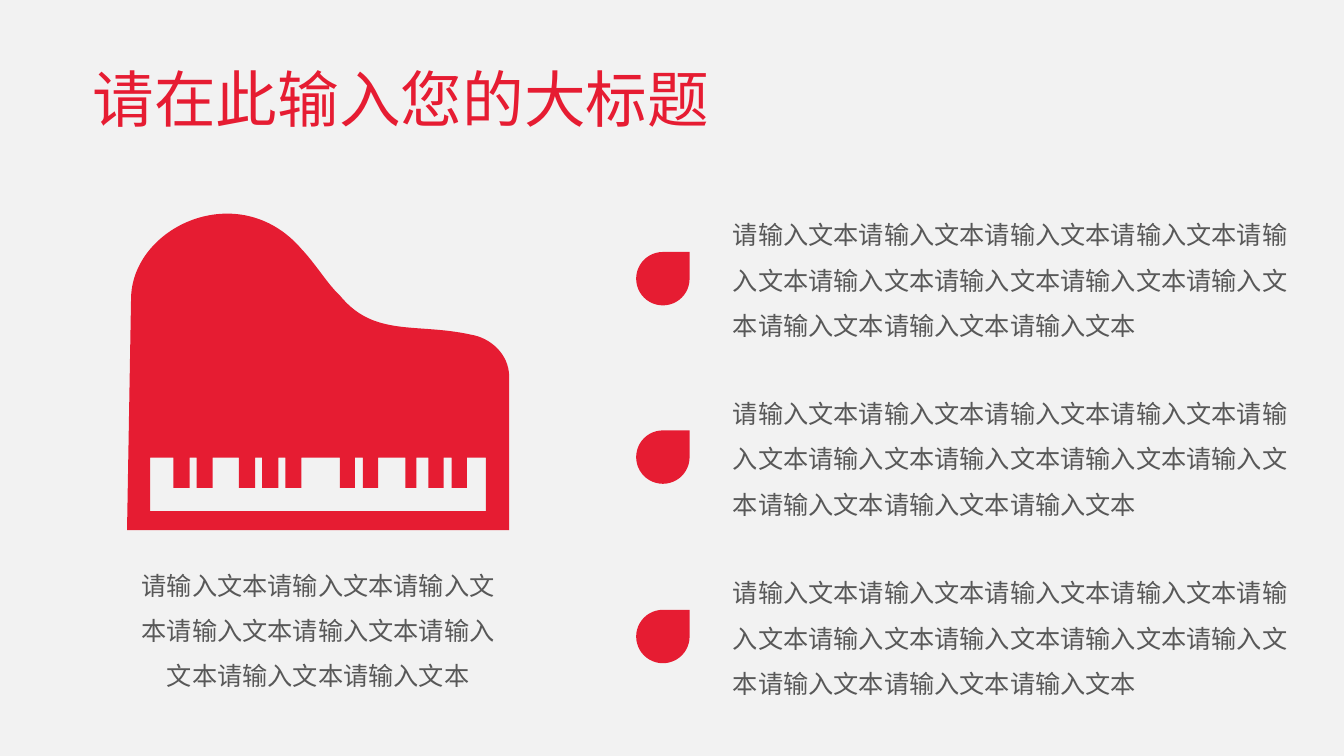
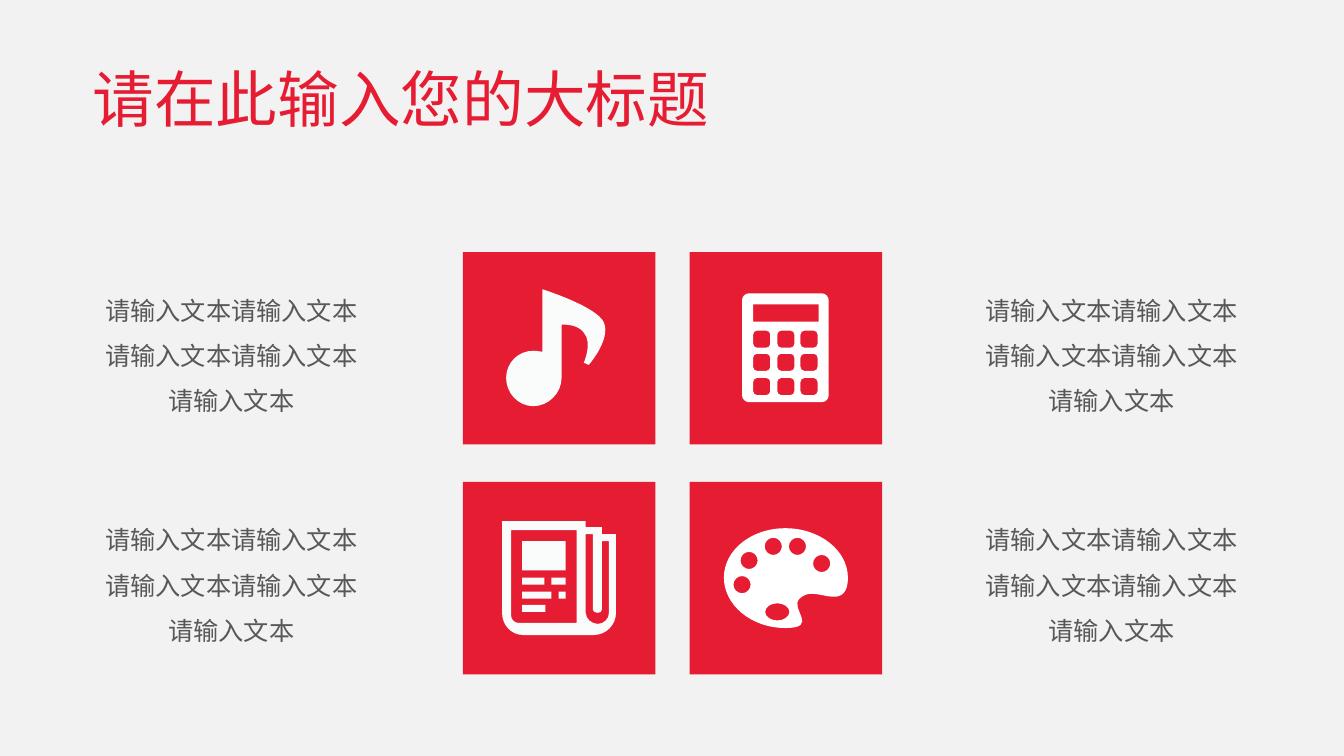
import pptx
import pptx.dml.color
import pptx.enum.shapes
import pptx.enum.text
import pptx.oxml.ns
import pptx.util
from lxml import etree

Inches = pptx.util.Inches
qn = pptx.oxml.ns.qn
SHAPE = pptx.enum.shapes.MSO_SHAPE
ALIGN = pptx.enum.text.PP_ALIGN
ANCHOR = pptx.enum.text.MSO_ANCHOR

# Shared look
COLORS = {"background": "F2F2F2", "red": "E61C32", "text": "585858",
          "white": "FFFFFF", "off_white": "F9FCFB"}
FONT = "Noto Sans CJK SC"
SLIDE_SIZE = (13.33, 7.5)
TITLE_BOX = (0.82, 0.18, 11.81, 1.22)

# Content
TITLE = "请在此输入您的大标题"
PHRASE = "请输入文本"
PIANO_CAPTION = PHRASE * 8
POINT_TEXT = PHRASE * 12
TILE_CAPTION = PHRASE * 5

# Layout: bullet points on slide 1, tiles on slide 2
POINT_TOPS = (2.5, 4.27, 6.05)
TILE_SIDE = 1.91
TILE_COLUMNS = (6.84, 4.59)
TILE_ROWS = (2.5, 4.78)
CAPTION_COLUMNS = (0.93, 9.66)


# Outlines: a contour lists corners (x, y) and cubic curves
# (x1, y1, x2, y2, x, y) in inches; its first step is a corner
def rectangle(left, top, right, bottom):
    return [(left, top), (right, top), (right, bottom), (left, bottom)]


def rounded(left, top, right, bottom, radius_x, radius_y):
    pull_x, pull_y = 0.45 * radius_x, 0.45 * radius_y
    return [
        (left + radius_x, top), (right - radius_x, top),
        (right - pull_x, top, right, top + pull_y, right, top + radius_y),
        (right, bottom - radius_y),
        (right, bottom - pull_y, right - pull_x, bottom,
         right - radius_x, bottom),
        (left + radius_x, bottom),
        (left + pull_x, bottom, left, bottom - pull_y,
         left, bottom - radius_y),
        (left, top + radius_y),
        (left, top + pull_y, left + pull_x, top, left + radius_x, top)]


def ellipse(x, y, width, height):
    half_width, half_height = width / 2, height / 2
    outline = rounded(x - half_width, y - half_height,
                      x + half_width, y + half_height,
                      half_width, half_height)
    return outline[:1] + [step for step in outline if len(step) == 6]


def piano():
    body = [
        (1.26, 5.26), (5.05, 5.26), (5.05, 3.74),
        (5.05, 3.51, 4.86, 3.35, 4.67, 3.32),
        (4.13, 3.2, 3.71, 3.35, 3.37, 2.93),
        (3.25, 2.82, 3.14, 2.63, 2.99, 2.47),
        (2.37, 1.75, 1.3, 2.25, 1.3, 2.97)]
    black_keys = [(1.72, 1.88), (1.95, 2.11), (2.37, 2.53), (2.6, 2.76),
                  (2.83, 2.99), (3.37, 3.52), (3.6, 3.75), (4.02, 4.13),
                  (4.25, 4.4), (4.48, 4.63)]
    top, key_end, bottom = 4.54, 4.84, 5.07
    keyboard = [(1.49, bottom), (1.49, top)]
    for left, right in black_keys:
        keyboard += [(left, top), (left, key_end),
                     (right, key_end), (right, top)]
    keyboard += [(4.82, top), (4.82, bottom)]
    return [body, keyboard]


def note():
    return [[
        (5.29, 3.48), (5.33, 3.48, 5.36, 3.49, 5.38, 3.49), (5.38, 2.87),
        (5.38, 2.87, 5.92, 3.04, 5.99, 3.2),
        (6.06, 3.37, 5.84, 3.62, 5.84, 3.62), (5.79, 3.6),
        (5.79, 3.6, 5.88, 3.4, 5.79, 3.3),
        (5.74, 3.23, 5.64, 3.22, 5.57, 3.22), (5.57, 3.75),
        (5.57, 3.9, 5.44, 4.03, 5.29, 4.03),
        (5.14, 4.03, 5.02, 3.9, 5.02, 3.75),
        (5.02, 3.6, 5.14, 3.48, 5.29, 3.48)]]


def calculator():
    key = 0.17
    keys = [rounded(x, y, x + key, y + key, 0.04, 0.04)
            for x in (7.47, 7.71, 7.94) for y in (3.28, 3.51, 3.75)]
    return [rounded(7.36, 2.91, 8.22, 3.99, 0.07, 0.07),
            rectangle(7.47, 3.02, 8.12, 3.19)] + keys


def newspaper():
    outline = [
        (5.89, 6.3), (5.19, 6.3), (5.07, 6.3, 4.98, 6.2, 4.98, 6.08),
        (4.98, 5.17), (5.81, 5.17), (5.81, 5.23), (5.97, 5.23), (5.97, 5.3),
        (6.11, 5.3), (6.11, 6.08), (6.11, 6.2, 6.01, 6.3, 5.89, 6.3)]
    page = [(5.72, 5.26), (5.07, 5.26), (5.07, 6.11),
            (5.07, 6.14, 5.1, 6.18, 5.14, 6.18), (5.72, 6.18)]
    fold = [
        (6.04, 5.37), (5.97, 5.37), (5.97, 6.05),
        (5.97, 6.07, 5.95, 6.08, 5.93, 6.08),
        (5.91, 6.08, 5.88, 6.07, 5.88, 6.05), (5.88, 5.3), (5.81, 5.3),
        (5.81, 6.08), (5.81, 6.14, 5.87, 6.19, 5.93, 6.19),
        (5.99, 6.19, 6.04, 6.14, 6.04, 6.08)]
    photo = rectangle(5.18, 5.37, 5.61, 5.66)
    text_bars = [(5.18, 5.73, 5.4), (5.47, 5.73, 5.61), (5.18, 5.87, 5.47),
                 (5.54, 5.87, 5.61), (5.18, 6, 5.41)]
    bars = [rectangle(left, top, right, top + 0.07)
            for left, top, right in text_bars]
    return [outline, page, fold, photo] + bars


def palette():
    board = [
        (7.79, 5.24), (8.13, 5.24, 8.41, 5.46, 8.41, 5.73),
        (8.41, 5.88, 8.35, 5.92, 8.27, 5.92),
        (8.2, 5.92, 8.12, 5.89, 8.05, 5.89),
        (8, 5.89, 7.96, 5.91, 7.93, 5.94),
        (7.83, 6.04, 8.13, 6.23, 7.79, 6.23),
        (7.45, 6.23, 7.18, 6, 7.18, 5.73),
        (7.18, 5.46, 7.45, 5.24, 7.79, 5.24)]
    paints = [(8.15, 5.59), (7.91, 5.42), (7.67, 5.42), (7.43, 5.56),
              (7.36, 5.8)]
    thumb_hole = ellipse(7.71, 6.07, 0.24, 0.17)
    return [board, thumb_hole] + [ellipse(x, y, 0.17, 0.17) for x, y in paints]


# Drawing helpers
def rgb(name):
    return pptx.dml.color.RGBColor.from_string(COLORS[name])


def paint(shape, color):
    shape.shadow.inherit = False
    shape.fill.solid()
    shape.fill.fore_color.rgb = rgb(color)
    shape.line.fill.background()


def add_preset(slide, preset, box, color):
    shape = slide.shapes.add_shape(preset, *map(Inches, box))
    paint(shape, color)
    return shape


def add_outline(slide, contours, color):
    builder = None
    for contour in contours:
        points = [(Inches(step[i]), Inches(step[i + 1]))
                  for step in contour for i in range(0, len(step), 2)]
        if builder is None:
            builder = slide.shapes.build_freeform(*points[0])
        else:
            builder.move_to(*points[0])
        builder.add_line_segments(points[1:], close=True)
    shape = builder.convert_to_shape()
    paint(shape, color)

    # Turn each three segments that stand for a curve into one cubic curve
    segments = iter(list(shape._element.iter(qn("a:lnTo"))))
    for contour in contours:
        for step in contour[1:]:
            first = next(segments)
            if len(step) == 2:
                continue
            curve = etree.Element(qn("a:cubicBezTo"))
            first.addprevious(curve)
            for segment in (first, next(segments), next(segments)):
                curve.append(segment[0])
                segment.getparent().remove(segment)


def write(shape, text, size, color, spacing, align, anchor):
    frame = shape.text_frame
    frame.word_wrap = True
    frame.auto_size = pptx.enum.text.MSO_AUTO_SIZE.NONE
    frame.vertical_anchor = anchor
    paragraph = frame.paragraphs[0]
    paragraph.alignment = align
    paragraph.line_spacing = spacing
    run = paragraph.add_run()
    run.text = text
    run.font.size = pptx.util.Pt(size)
    run.font.color.rgb = rgb(color)
    run.font.name = FONT
    east_asian = etree.SubElement(run._r.get_or_add_rPr(), qn("a:ea"))
    east_asian.set("typeface", FONT)


def add_text(slide, box, text, align=ALIGN.CENTER):
    shape = slide.shapes.add_textbox(*map(Inches, box))
    write(shape, text, 18, "text", 1.5, align, ANCHOR.MIDDLE)


def add_slide(presentation, layout):
    slide = presentation.slides.add_slide(layout)
    write(slide.shapes.title, TITLE, 44, "red", 0.9, ALIGN.LEFT, ANCHOR.BOTTOM)
    return slide


# Slides
def build_piano_slide(slide):
    add_outline(slide, piano(), "red")
    add_text(slide, (1.26, 5.27, 3.79, 1.82), PIANO_CAPTION)
    for top in POINT_TOPS:
        add_preset(slide, SHAPE.TEAR, (6.31, top, 0.53, 0.53), "red")
        add_text(slide, (7.17, top - 0.58, 5.9, 1.57), POINT_TEXT, ALIGN.LEFT)


def build_tile_slide(slide):
    for top in TILE_ROWS:
        for left in CAPTION_COLUMNS:
            add_text(slide, (left, top + 0.2, 2.73, 1.5), TILE_CAPTION)
    for left in TILE_COLUMNS:
        for top in TILE_ROWS:
            add_preset(slide, SHAPE.RECTANGLE,
                       (left, top, TILE_SIDE, TILE_SIDE), "red")
    for icon, color in ((palette, "white"), (note, "off_white"),
                        (calculator, "white"), (newspaper, "off_white")):
        add_outline(slide, icon(), color)


def main():
    presentation = pptx.Presentation()
    presentation.slide_width, presentation.slide_height = map(
        Inches, SLIDE_SIZE)
    layout = presentation.slide_layouts.get_by_name("Title Only")
    title = layout.placeholders[0]
    title.left, title.top, title.width, title.height = map(Inches, TITLE_BOX)

    piano_slide = add_slide(presentation, layout)
    # The backdrop moves to the master, behind everything on each slide
    backdrop = add_preset(piano_slide, SHAPE.RECTANGLE,
                          (0, 0, *SLIDE_SIZE), "background")
    presentation.slide_master.shapes._spTree.insert(2, backdrop._element)

    build_piano_slide(piano_slide)
    build_tile_slide(add_slide(presentation, layout))
    presentation.save("out.pptx")


if __name__ == "__main__":
    main()
